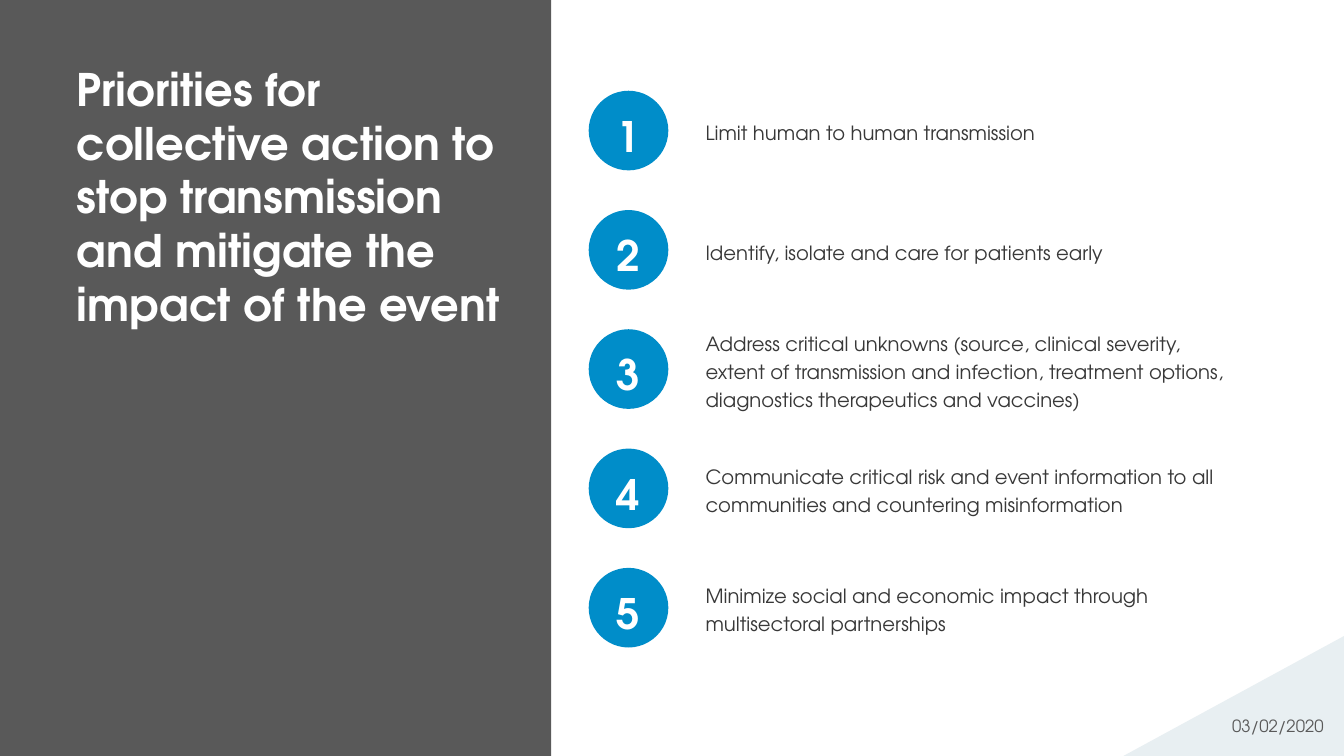
"""Build the slide listing five priorities for collective action."""
import pptx
import pptx.dml.color
import pptx.enum.shapes
import pptx.enum.text
import pptx.util

Pt = pptx.util.Pt
Align = pptx.enum.text.PP_ALIGN
Anchor = pptx.enum.text.MSO_ANCHOR
Preset = pptx.enum.shapes.MSO_SHAPE

HEADING = "Priorities for collective action to stop transmission and mitigate the impact of the event"
PRIORITIES = [
    "Limit human to human transmission",
    "Identify, isolate and care for patients early",
    "Address critical unknowns (source, clinical severity, extent of transmission and infection, "
    "treatment options, diagnostics therapeutics and vaccines)",
    "Communicate critical risk and event information to all communities and countering misinformation",
    "Minimize social and economic impact through multisectoral partnerships",
]
DATE = "03/02/2020"

THEME = {
    "font": "TeX Gyre Adventor",
    "panel": "595959", "badge": "008DC9", "corner": "E8EFF2",
    "light": "FFFFFF", "body": "383838", "muted": "595959",
    "heading_size": 32, "number_size": 30, "body_size": 14, "date_size": 12,
}
WIDTH, HEIGHT = 960, 540
PANEL_WIDTH = 393.8
FIRST_TOP, PITCH, BADGE_SIZE = 64.8, 85.2, 56.9
BADGE_LEFT, PRIORITY_LEFT, PRIORITY_WIDTH = 420.5, 504, 380
CORNER_LEFT, CORNER_TOP, CORNER_INSET = 802.4, 454.3, 14.4


def rgb(role):
    return pptx.dml.color.RGBColor.from_string(THEME[role])


def paint(shape, role):
    shape.shadow.inherit = False
    shape.fill.solid()
    shape.fill.fore_color.rgb = rgb(role)
    shape.line.fill.background()


def write(shape, text, size, color, align=Align.LEFT, anchor=Anchor.MIDDLE,
          bold=False, spacing=1.0, inset=0):
    frame = shape.text_frame
    frame.word_wrap = True
    frame.vertical_anchor = anchor
    frame.margin_left = frame.margin_top = 0
    frame.margin_right = frame.margin_bottom = Pt(inset)
    paragraph = frame.paragraphs[0]
    paragraph.text = text
    paragraph.alignment = align
    paragraph.line_spacing = spacing
    paragraph.font.name = THEME["font"]
    paragraph.font.size = Pt(THEME[size])
    paragraph.font.bold = bold
    paragraph.font.color.rgb = rgb(color)


def main():
    deck = pptx.Presentation()
    deck.slide_width, deck.slide_height = Pt(WIDTH), Pt(HEIGHT)
    shapes = deck.slides.add_slide(deck.slide_layouts[6]).shapes

    panel = shapes.add_shape(Preset.RECTANGLE, 0, 0, Pt(PANEL_WIDTH), Pt(HEIGHT))
    paint(panel, "panel")
    heading = shapes.add_textbox(Pt(54.7), Pt(43.9), Pt(311.8), Pt(193.7))
    write(heading, HEADING, "heading_size", "light", anchor=Anchor.TOP, bold=True)

    for index, wording in enumerate(PRIORITIES):
        top = Pt(FIRST_TOP + index * PITCH)
        priority = shapes.add_textbox(Pt(PRIORITY_LEFT), top, Pt(PRIORITY_WIDTH), Pt(BADGE_SIZE))
        write(priority, wording, "body_size", "body", spacing=1.2)
        badge = shapes.add_shape(Preset.OVAL, Pt(BADGE_LEFT), top, Pt(BADGE_SIZE), Pt(BADGE_SIZE))
        paint(badge, "badge")
        write(badge, str(index + 1), "number_size", "light", Align.CENTER, bold=True, spacing=1.2)

    outline = shapes.build_freeform(Pt(CORNER_LEFT), Pt(HEIGHT))
    outline.add_line_segments([(Pt(WIDTH), Pt(CORNER_TOP)), (Pt(WIDTH), Pt(HEIGHT))], close=True)
    corner = outline.convert_to_shape()
    paint(corner, "corner")
    write(corner, DATE, "date_size", "muted", Align.RIGHT, Anchor.BOTTOM, inset=CORNER_INSET)

    deck.save("out.pptx")


if __name__ == "__main__":
    main()
